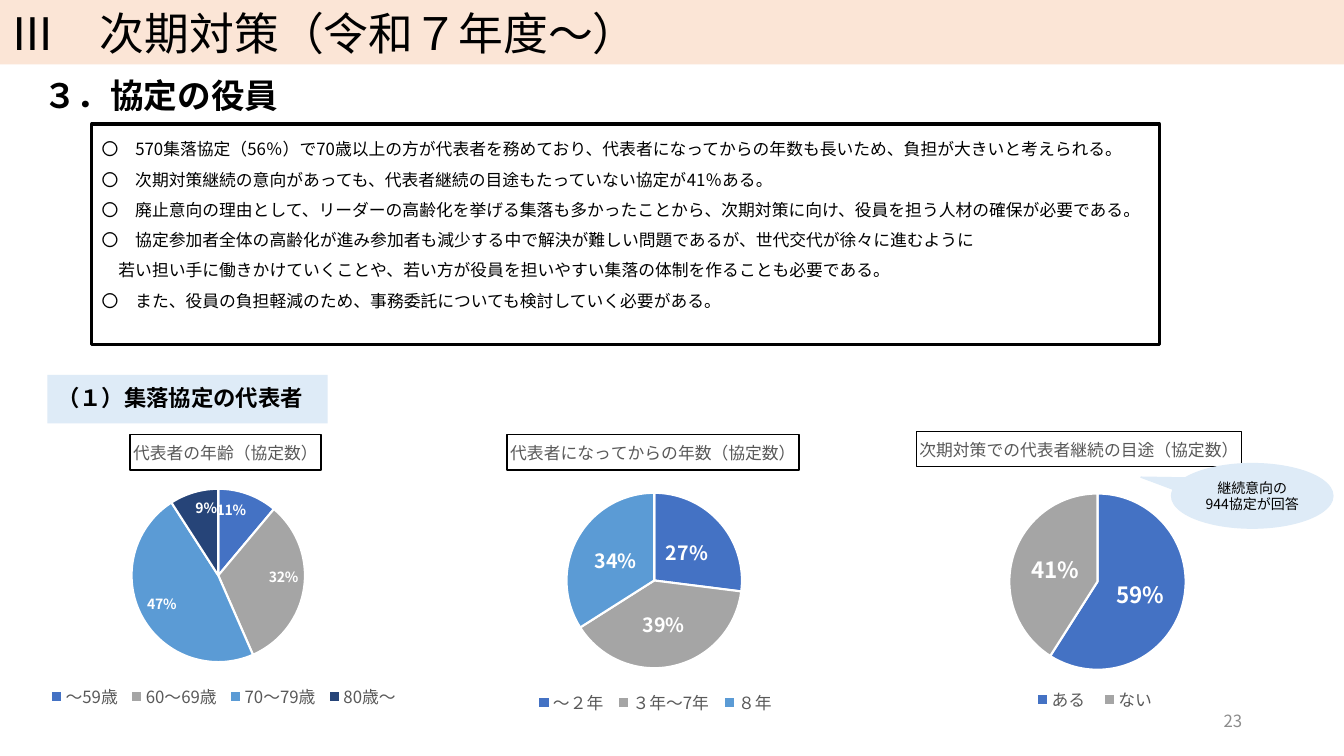
"""Builds the slide on the officers of village agreements."""
from dataclasses import dataclass

from lxml import etree
from pptx import Presentation
from pptx import util as u
from pptx.chart.data import CategoryChartData
from pptx.dml.color import RGBColor
from pptx.enum import chart as ch, shapes, text
from pptx.oxml.ns import qn

EMU_PER_PX = 9144
FONT = "Noto Sans CJK JP"
BLACK = RGBColor(0x00, 0x00, 0x00)
WHITE = RGBColor(0xFF, 0xFF, 0xFF)
GREY_TEXT = RGBColor(0x59, 0x59, 0x59)
PAGE_GREY = RGBColor(0x8C, 0x8C, 0x8C)
PEACH = RGBColor(0xFB, 0xE5, 0xD6)
PALE_BLUE = RGBColor(0xDE, 0xEB, 0xF7)
BLUE = RGBColor(0x44, 0x72, 0xC4)
GREY = RGBColor(0xA5, 0xA5, 0xA5)
SKY = RGBColor(0x5B, 0x9B, 0xD5)
NAVY = RGBColor(0x26, 0x44, 0x78)


@dataclass(frozen=True)
class Box:
    x: int
    y: int
    w: int
    h: int

    def emu(self) -> list[u.Emu]:
        return [px(n) for n in (self.x, self.y, self.w, self.h)]


@dataclass(frozen=True)
class Pie:
    heading: str
    shares: dict[str, int]
    colours: tuple[RGBColor, ...]
    frame: Box
    heading_at: tuple[int, int]
    plot: Box
    legend: Box
    label_size: int
    label_position: ch.XL_LABEL_POSITION


PIES = [
    Pie("代表者の年齢（協定数）",
        {"～59歳": 11, "60～69歳": 32, "70～79歳": 47, "80歳～": 9},
        (BLUE, GREY, SKY, NAVY), Box(43, 419, 363, 311), (129, 431),
        Box(129, 485, 175, 172), Box(43, 675, 358, 32),
        10, ch.XL_LABEL_POSITION.INSIDE_END),
    Pie("次期対策での代表者継続の目途（協定数）",
        {"ある": 59, "ない": 41},
        (BLUE, GREY), Box(818, 407, 435, 396), (909, 428),
        Box(1001, 487, 175, 180), Box(1016, 678, 140, 32),
        16, ch.XL_LABEL_POSITION.CENTER),
    Pie("代表者になってからの年数（協定数）",
        {"～２年": 27, "３年～7年": 39, "８年": 34},
        (BLUE, GREY, SKY), Box(447, 419, 403, 295), (503, 431),
        Box(562, 489, 174, 174), Box(525, 681, 250, 32),
        14, ch.XL_LABEL_POSITION.CENTER),
]

FINDINGS = (
    "〇　570集落協定（56％）で70歳以上の方が代表者を務めており、代表者になってからの年数も長いため、負担が大きいと考えられる。",
    "〇　次期対策継続の意向があっても、代表者継続の目途もたっていない協定が41％ある。",
    "〇　廃止意向の理由として、リーダーの高齢化を挙げる集落も多かったことから、次期対策に向け、役員を担う人材の確保が必要である。",
    "〇　協定参加者全体の高齢化が進み参加者も減少する中で解決が難しい問題であるが、世代交代が徐々に進むように",
    "　若い担い手に働きかけていくことや、若い方が役員を担いやすい集落の体制を作ることも必要である。",
    "〇　また、役員の負担軽減のため、事務委託についても検討していく必要がある。",
)


def px(n: int) -> u.Emu:
    return u.Emu(n * EMU_PER_PX)


def style_font(font, size: float, colour: RGBColor, bold: bool = False) -> None:
    font.name, font.size, font.bold = FONT, u.Pt(size), bold
    font.color.rgb = colour


def name_east_asian_font(root) -> None:
    for latin in list(root.iter(qn("a:latin"))):
        east_asian = etree.Element(qn("a:ea"))
        east_asian.set("typeface", FONT)
        latin.addnext(east_asian)


def write(shape, *lines: str, size: float, colour: RGBColor = BLACK,
          bold: bool = False, align=text.PP_ALIGN.LEFT,
          anchor=text.MSO_ANCHOR.MIDDLE, spacing=1.0, margin: int = 5) -> None:
    frame = shape.text_frame
    frame.word_wrap = True
    frame.auto_size = text.MSO_AUTO_SIZE.NONE
    frame.vertical_anchor = anchor
    frame.margin_left = frame.margin_right = px(10)
    frame.margin_top = frame.margin_bottom = px(margin)
    for index, line in enumerate(lines):
        paragraph = frame.paragraphs[0] if index == 0 else frame.add_paragraph()
        paragraph.alignment = align
        paragraph.line_spacing = spacing
        paragraph.space_before = paragraph.space_after = u.Pt(0)
        run = paragraph.add_run()
        run.text = line
        style_font(run.font, size, colour, bold)


def add_panel(slide, box: Box, kind=shapes.MSO_SHAPE.RECTANGLE, fill=None,
              line=None, width: float = 1):
    panel = slide.shapes.add_shape(kind, *box.emu())
    panel.shadow.inherit = False
    if fill is None:
        panel.fill.background()
    else:
        panel.fill.solid()
        panel.fill.fore_color.rgb = fill
    if line is None:
        panel.line.fill.background()
    else:
        panel.line.color.rgb = line
        panel.line.width = u.Pt(width)
    return panel


def place(part, frame: Box, x: int, y: int, w: int = 0, h: int = 0,
          after: str = "", inner: bool = False) -> None:
    for old in part.findall(qn("c:layout")):
        part.remove(old)
    layout = etree.Element(qn("c:layout"))
    manual = etree.SubElement(layout, qn("c:manualLayout"))
    settings = {"layoutTarget": "inner"} if inner else {}
    settings |= {"xMode": "edge", "yMode": "edge",
                 "x": round((x - frame.x) / frame.w, 3),
                 "y": round((y - frame.y) / frame.h, 3)}
    if w:
        settings |= {"w": round(w / frame.w, 3), "h": round(h / frame.h, 3)}
    for tag, value in settings.items():
        etree.SubElement(manual, qn(f"c:{tag}")).set("val", str(value))
    if after:
        part.find(qn(after)).addnext(layout)
    else:
        part.insert(0, layout)


def add_pie(slide, pie: Pie) -> None:
    data = CategoryChartData()
    data.categories = list(pie.shares)
    data.add_series("協定数", list(pie.shares.values()))
    chart = slide.shapes.add_chart(ch.XL_CHART_TYPE.PIE, *pie.frame.emu(), data).chart
    style_font(chart.font, 10, BLACK)

    chart.has_title = True
    heading = chart.chart_title
    run = heading.text_frame.paragraphs[0].add_run()
    run.text = pie.heading
    style_font(run.font, 12, GREY_TEXT)
    heading.format.line.color.rgb = BLACK
    heading.format.line.width = u.Pt(1)

    chart.has_legend = True
    chart.legend.position = ch.XL_LEGEND_POSITION.BOTTOM
    chart.legend.include_in_layout = False
    style_font(chart.legend.font, 12, GREY_TEXT)

    plot = chart.plots[0]
    plot.vary_by_categories = True
    for index, colour in enumerate(pie.colours):
        slice_format = plot.series[0].points[index].format
        slice_format.fill.solid()
        slice_format.fill.fore_color.rgb = colour
        slice_format.line.color.rgb = WHITE
        slice_format.line.width = u.Pt(1.5)
    plot.has_data_labels = True
    labels = plot.data_labels
    labels.show_percentage, labels.show_value = True, False
    labels.number_format, labels.number_format_is_linked = "0%", False
    labels.position = pie.label_position
    style_font(labels.font, pie.label_size, WHITE, bold=True)

    root = chart.element
    place(root.find(".//" + qn("c:title")), pie.frame, *pie.heading_at, after="c:tx")
    for tag, box, after in (("c:plotArea", pie.plot, ""),
                            ("c:legend", pie.legend, "c:legendPos")):
        place(root.find(".//" + qn(tag)), pie.frame, box.x, box.y, box.w, box.h,
              after=after, inner=not after)
    name_east_asian_font(root)


def main() -> None:
    deck = Presentation()
    deck.slide_width, deck.slide_height = px(1333), px(750)
    slide = deck.slides.add_slide(deck.slide_layouts[5])

    topic = slide.shapes.title
    topic.left, topic.top, topic.width, topic.height = Box(0, 0, 1333, 64).emu()
    topic.fill.solid()
    topic.fill.fore_color.rgb = PEACH
    write(topic, "Ⅲ　次期対策（令和７年度～）", size=32, margin=0)

    for pie in PIES:
        add_pie(slide, pie)

    findings = add_panel(slide, Box(91, 123, 1059, 219), line=BLACK, width=2.25)
    write(findings, *FINDINGS, size=12, anchor=text.MSO_ANCHOR.TOP,
          spacing=u.Pt(21.6))
    section = slide.shapes.add_textbox(*Box(33, 73, 927, 48).emu())
    write(section, "３．協定の役員", size=24, bold=True, spacing=0.9)
    subsection = add_panel(slide, Box(47, 372, 278, 48), fill=PALE_BLUE)
    write(subsection, "（１）集落協定の代表者", size=16, bold=True, spacing=0.9)
    page = slide.shapes.add_textbox(*Box(942, 695, 300, 40).emu())
    write(page, "23", size=12, colour=PAGE_GREY, align=text.PP_ALIGN.RIGHT)

    respondents = add_panel(slide, Box(1162, 460, 160, 64),
                            shapes.MSO_SHAPE.OVAL_CALLOUT,
                            fill=PALE_BLUE, line=PALE_BLUE)
    respondents.adjustments[0], respondents.adjustments[1] = -0.69, -0.29
    write(respondents, "継続意向の", "944協定が回答", size=10,
          align=text.PP_ALIGN.CENTER, spacing=u.Pt(11.8))

    name_east_asian_font(slide.shapes.element)
    deck.save("out.pptx")


if __name__ == "__main__":
    main()
